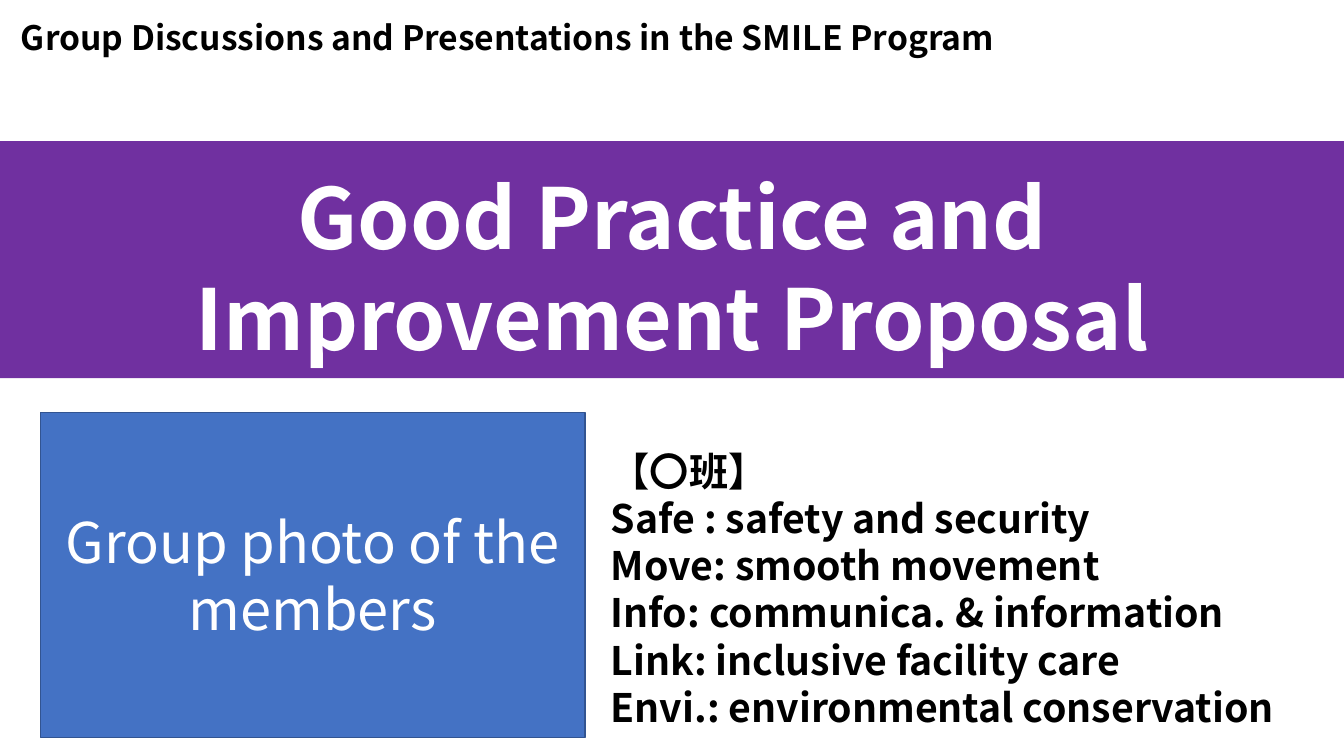
import pptx
import pptx.util
import pptx.dml.color
import pptx.enum.shapes
import pptx.enum.text
import pptx.oxml.ns
import lxml.etree

Cm, Pt = pptx.util.Cm, pptx.util.Pt
RGBColor = pptx.dml.color.RGBColor
PP_ALIGN = pptx.enum.text.PP_ALIGN
MSO_ANCHOR = pptx.enum.text.MSO_ANCHOR
RECTANGLE = pptx.enum.shapes.MSO_SHAPE.RECTANGLE
qn = pptx.oxml.ns.qn

# Content
HEADER = "Group Discussions and Presentations in the SMILE Program"
TITLE = "Good Practice and Improvement Proposal"
PHOTO_LABEL = "Group photo of the members"
TEAMS = [
    "【〇班】",
    "Safe : safety and security",
    "Move: smooth movement",
    "Info: communica. & information",
    "Link: inclusive facility care",
    "Envi.: environmental conservation",
]

# Style
FONT = "Noto Sans CJK JP"
PURPLE = RGBColor(0x70, 0x30, 0xA0)
BLUE = RGBColor(0x44, 0x72, 0xC4)
DARK_BLUE = RGBColor(0x32, 0x54, 0x91)
WHITE = RGBColor(0xFF, 0xFF, 0xFF)
BLACK = RGBColor(0, 0, 0)

# Places in cm: left, top, width, height
SLIDE_W, SLIDE_H = 33.87, 19.05
BAND = (0, 3.56, SLIDE_W, 5.97)
TITLE_BOX = (0, 4.04, SLIDE_W, 5.38)
HEADER_BOX = (0.28, 0.3, 32.56, 1.27)
PHOTO_BOX = (1.02, 10.39, 13.72, 8.2)
TEAMS_BOX = (15.14, 11.15, 18.44, 7.44)


def place(sp, box):
    sp.left, sp.top, sp.width, sp.height = (Cm(v) for v in box)


def write(sp, lines, size, color, bold=True, align=PP_ALIGN.LEFT,
          anchor=MSO_ANCHOR.TOP):
    tf = sp.text_frame
    tf.text = "\n".join(lines)
    tf.word_wrap = True
    tf.auto_size = pptx.enum.text.MSO_AUTO_SIZE.NONE
    tf.vertical_anchor = anchor
    for p in tf.paragraphs:
        p.alignment = align
        p.space_before = Pt(0)
        for r in p.runs:
            r.font.name = FONT
            r.font.size = Pt(size)
            r.font.bold = bold
            r.font.color.rgb = color
            ea = lxml.etree.SubElement(r.font._element, qn("a:ea"))
            ea.set("typeface", FONT)


def add_rect(box, fill):
    sp = s.shapes.add_shape(RECTANGLE, *(Cm(v) for v in box))
    sp.shadow.inherit = False
    sp.fill.solid()
    sp.fill.fore_color.rgb = fill
    return sp


prs = pptx.Presentation()
prs.slide_width, prs.slide_height = Cm(SLIDE_W), Cm(SLIDE_H)
s = prs.slides.add_slide(prs.slide_layouts[1])

# Purple band, behind the title
band = add_rect(BAND, PURPLE)
band.line.fill.background()
s.shapes._spTree.insert(2, band._element)

# Title
title = s.shapes.title
place(title, TITLE_BOX)
write(title, [TITLE], 60, WHITE, align=PP_ALIGN.CENTER)

# Header line
header = s.shapes.add_textbox(*(Cm(v) for v in HEADER_BOX))
write(header, [HEADER], 24, BLACK)

# Photo area
photo = add_rect(PHOTO_BOX, BLUE)
photo.line.color.rgb = DARK_BLUE
photo.line.width = Pt(1)
write(photo, [PHOTO_LABEL], 40, WHITE, bold=False, align=PP_ALIGN.CENTER,
      anchor=MSO_ANCHOR.MIDDLE)

# Team list, without bullets
teams = s.placeholders[1]
place(teams, TEAMS_BOX)
write(teams, TEAMS, 28, BLACK)
for p in teams.text_frame.paragraphs:
    pPr = p._p.get_or_add_pPr()
    pPr.set("marL", "0")
    pPr.set("indent", "0")
    lxml.etree.SubElement(pPr, qn("a:buNone"))

prs.save("out.pptx")
